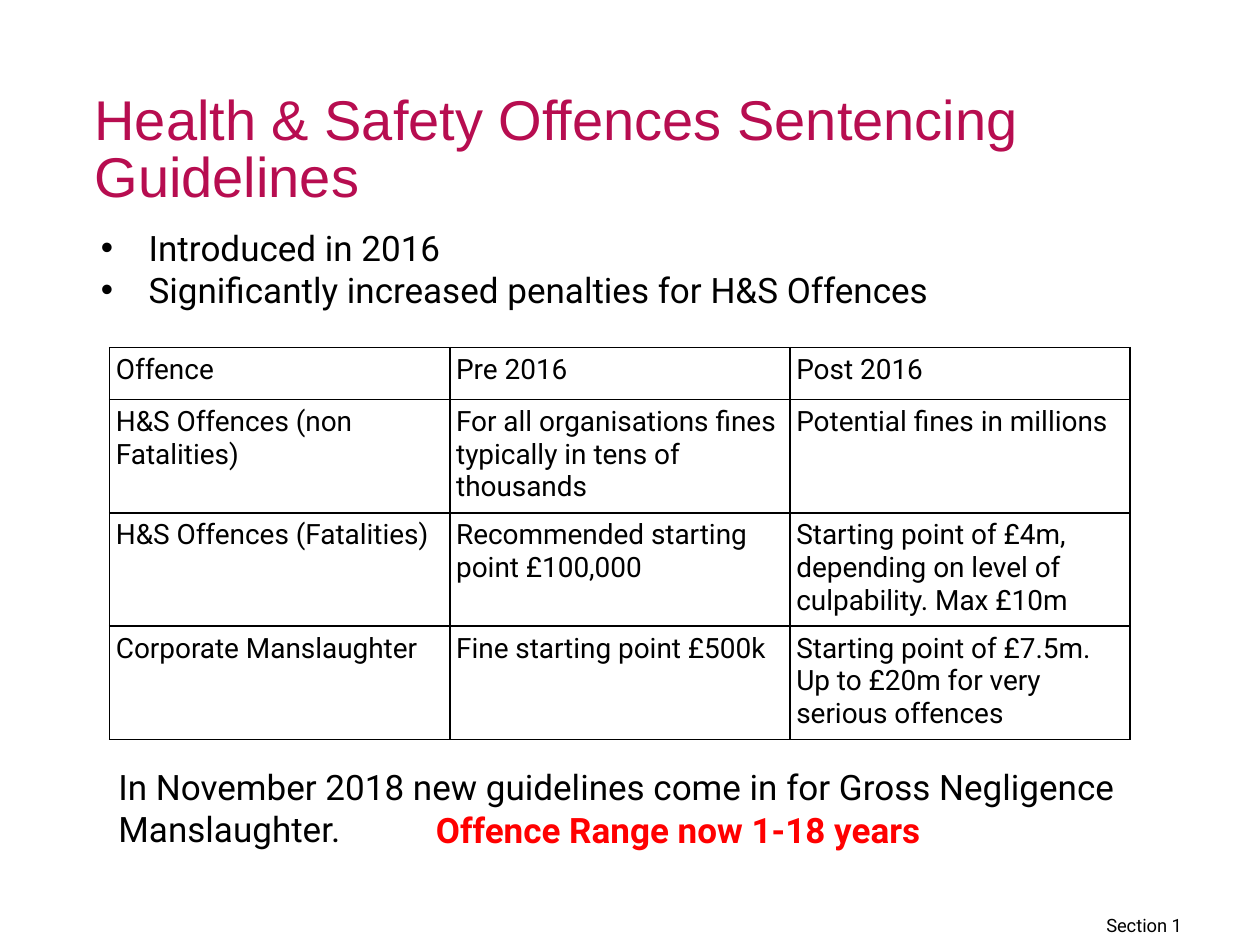
"""Build the slide on health and safety sentencing guidelines."""
from lxml.etree import SubElement
from pptx import Presentation
from pptx.dml.color import RGBColor
from pptx.oxml.ns import qn
from pptx.util import Inches, Pt

BLACK = RGBColor(0, 0, 0)
RED = RGBColor(0xFF, 0, 0)
CRIMSON = RGBColor(0xB7, 0x0D, 0x50)
INSET = Inches(0.05)


def add_run(paragraph, text, size, color=BLACK, font="Roboto", bold=False):
    run = paragraph.add_run()
    run.text = text
    run.font.name = font
    run.font.size = Pt(size)
    run.font.color.rgb = color
    run.font.bold = bold


def add_frame(left, top, width, height, inset=INSET):
    box = slide.shapes.add_textbox(Inches(left), Inches(top), Inches(width), Inches(height))
    frame = box.text_frame
    frame.word_wrap = True
    frame.margin_left = frame.margin_right = inset
    frame.margin_top = frame.margin_bottom = inset
    return frame


prs = Presentation()
prs.slide_width, prs.slide_height = Inches(10), Inches(7.5)
slide = prs.slides.add_slide(prs.slide_layouts[6])

title = add_frame(0.75, 0.75, 8.5, 1, inset=0).paragraphs[0]
title.line_spacing = 0.85
add_run(title, "Health & Safety Offences Sentencing Guidelines", 32, CRIMSON, "Arial")

points = add_frame(0.75, 1.75, 8.75, 4.28)
for index, point in enumerate(["Introduced in 2016", "Significantly increased penalties for H&S Offences"]):
    paragraph = points.add_paragraph() if index else points.paragraphs[0]
    properties = paragraph._p.get_or_add_pPr()
    properties.set("marL", str(Inches(0.38)))
    properties.set("indent", str(-Inches(0.38)))
    SubElement(properties, qn("a:buFont"), typeface="Arial")
    SubElement(properties, qn("a:buChar"), char="•")
    add_run(paragraph, point, 20)

offences = [
    ["Offence", "Pre 2016", "Post 2016"],
    ["H&S Offences (non Fatalities)", "For all organisations fines typically in tens of thousands",
     "Potential fines in millions"],
    ["H&S Offences (Fatalities)", "Recommended starting point £100,000",
     "Starting point of £4m, depending on level of culpability. Max £10m"],
    ["Corporate Manslaughter", "Fine starting point £500k",
     "Starting point of £7.5m. Up to £20m for very serious offences"],
]
penalties = slide.shapes.add_table(
    len(offences), len(offences[0]), Inches(0.87), Inches(2.76), Inches(8.1), Inches(1.64)).table
penalties.first_row = penalties.horz_banding = False
for row, texts in enumerate(offences):
    for column, text in enumerate(texts):
        cell = penalties.cell(row, column)
        cell.margin_left = cell.margin_right = INSET
        cell.margin_top = cell.margin_bottom = INSET
        add_run(cell.text_frame.paragraphs[0], text, 16)
        borders = cell._tc.get_or_add_tcPr()
        for side in ("a:lnL", "a:lnR", "a:lnT", "a:lnB"):
            line = SubElement(borders, qn(side), w=str(Pt(1)))
            SubElement(SubElement(line, qn("a:solidFill")), qn("a:srgbClr"), val=str(BLACK))
        cell.fill.background()

for left, top, width, height, text, size, color, bold in [
    (0.89, 6.03, 8.1, 0.77,
     "In November 2018 new guidelines come in for Gross Negligence Manslaughter.", 20, BLACK, False),
    (3.41, 6.37, 4.37, 0.43, "Offence Range now 1-18 years", 20, RED, True),
    (8.73, 7.21, 1.31, 0.29, "Section 1", 10.5, BLACK, False),
]:
    note = add_frame(left, top, width, height)
    add_run(note.paragraphs[0], text, size, color, bold=bold)

prs.save("out.pptx")
